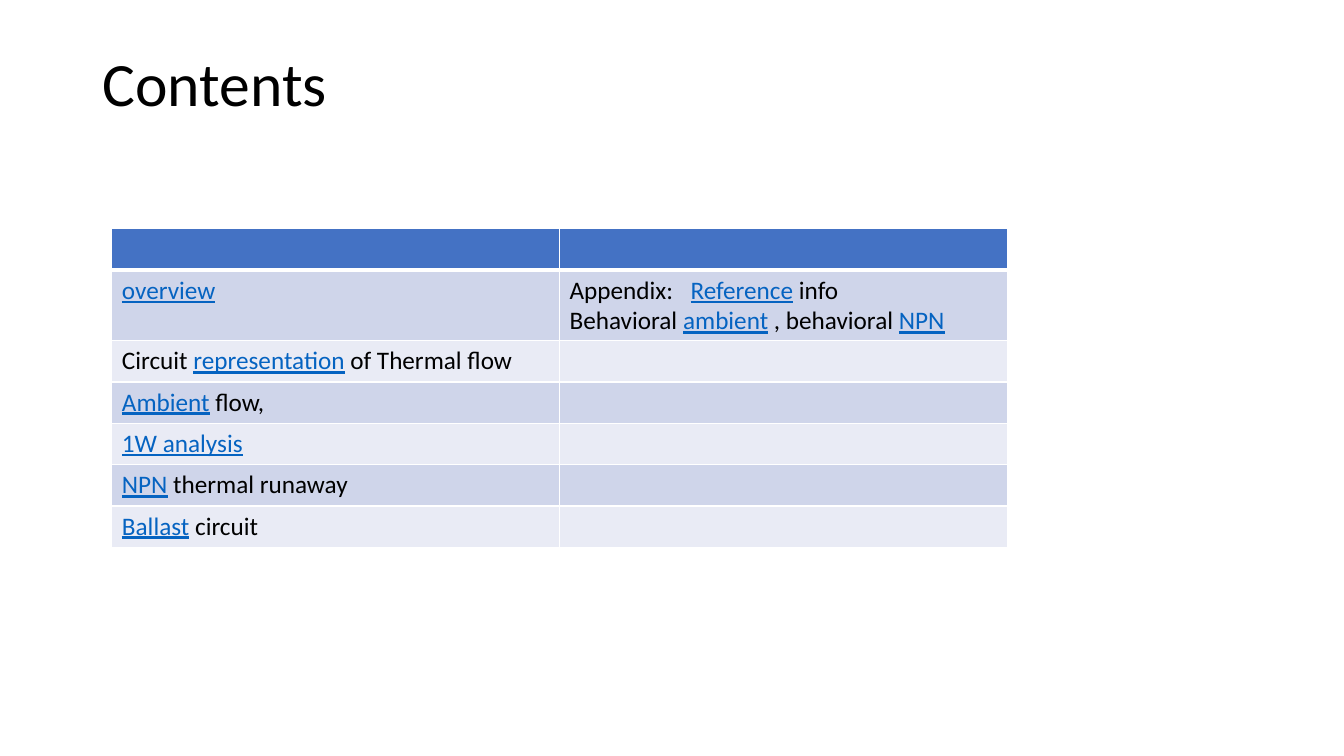
from pptx import Presentation
from pptx.dml.color import RGBColor
from pptx.enum import text
from pptx.oxml import ns
from pptx.util import Inches, Pt
from lxml import etree

BLACK = RGBColor(0x00, 0x00, 0x00)
WHITE = RGBColor(0xFF, 0xFF, 0xFF)
LINK = RGBColor(0x05, 0x63, 0xC1)
HEADER = RGBColor(0x44, 0x72, 0xC4)
BANDS = (RGBColor(0xCF, 0xD5, 0xEA), RGBColor(0xE9, 0xEB, 0xF5))

ROWS = [
    ("", ""),
    ("|overview|", "Appendix:\t|Reference| info\nBehavioral |ambient| , behavioral |NPN|"),
    ("Circuit |representation| of Thermal flow", ""),
    ("|Ambient| flow,", ""),
    ("|1W analysis|", ""),
    ("|NPN| thermal runaway", ""),
    ("|Ballast| circuit", ""),
]


class ContentsSlide:
    font = "Calibri"
    body_size = 18

    def __init__(self, prs):
        self.s = prs.slides.add_slide(prs.slide_layouts[6])

    def run(self, p, words, size, color=BLACK, underline=False):
        r = p.add_run()
        r.text = words
        r.font.name = self.font
        r.font.size = Pt(size)
        r.font.color.rgb = color
        if underline:
            r.font.underline = True

    def title(self, words, left, top, width, height):
        sp = self.s.shapes.add_textbox(Inches(left), Inches(top), Inches(width), Inches(height))
        tf = sp.text_frame
        tf.word_wrap = True
        tf.vertical_anchor = text.MSO_ANCHOR.MIDDLE
        p = tf.paragraphs[0]
        p.line_spacing = 0.9
        self.run(p, words, 44)

    def tab_stop(self, p, position):
        tabs = etree.SubElement(p._p.get_or_add_pPr(), ns.qn("a:tabLst"))
        etree.SubElement(tabs, ns.qn("a:tab"), pos=str(Inches(position)), algn="l")

    def borders(self, cell, top, bottom):
        tc_pr = cell._tc.get_or_add_tcPr()
        for side, width in (("L", 1), ("R", 1), ("T", top), ("B", bottom)):
            ln = etree.SubElement(tc_pr, ns.qn("a:ln" + side), w=str(Pt(width)))
            fill = etree.SubElement(ln, ns.qn("a:solidFill"))
            etree.SubElement(fill, ns.qn("a:srgbClr"), val=str(WHITE))

    def cell_text(self, cell, words):
        tf = cell.text_frame
        for i, line in enumerate(words.split("\n")):
            p = tf.add_paragraph() if i else tf.paragraphs[0]
            p.font.size = Pt(self.body_size)
            if "\t" in line:
                self.tab_stop(p, 1.2)
            for j, part in enumerate(line.split("|")):
                if part:
                    linked = j % 2 == 1
                    self.run(p, part, self.body_size, LINK if linked else BLACK, linked)

    def table(self, rows, left, top, col_width, row_height, tall_height):
        count = len(rows[0])
        height = row_height * (len(rows) - 1) + tall_height
        frame = self.s.shapes.add_table(len(rows), count, Inches(left), Inches(top),
                                        Inches(col_width * count), Inches(height))
        tbl = frame.table
        for col in tbl.columns:
            col.width = Inches(col_width)
        for i, row in enumerate(rows):
            tall = any("\n" in words for words in row)
            tbl.rows[i].height = Inches(tall_height if tall else row_height)
            for j, words in enumerate(row):
                cell = tbl.cell(i, j)
                self.borders(cell, 3 if i == 1 else 1, 3 if i == 0 else 1)
                cell.fill.solid()
                cell.fill.fore_color.rgb = BANDS[(i - 1) % 2] if i else HEADER
                self.cell_text(cell, words)


def main():
    prs = Presentation()
    prs.slide_width = Inches(13.33)
    prs.slide_height = Inches(7.5)
    slide = ContentsSlide(prs)
    slide.title("Contents", 0.92, 0.4, 2.91, 0.91)
    slide.table(ROWS, 1.11, 2.27, 4.44, 0.41, 0.7)
    prs.save("out.pptx")


if __name__ == "__main__":
    main()
